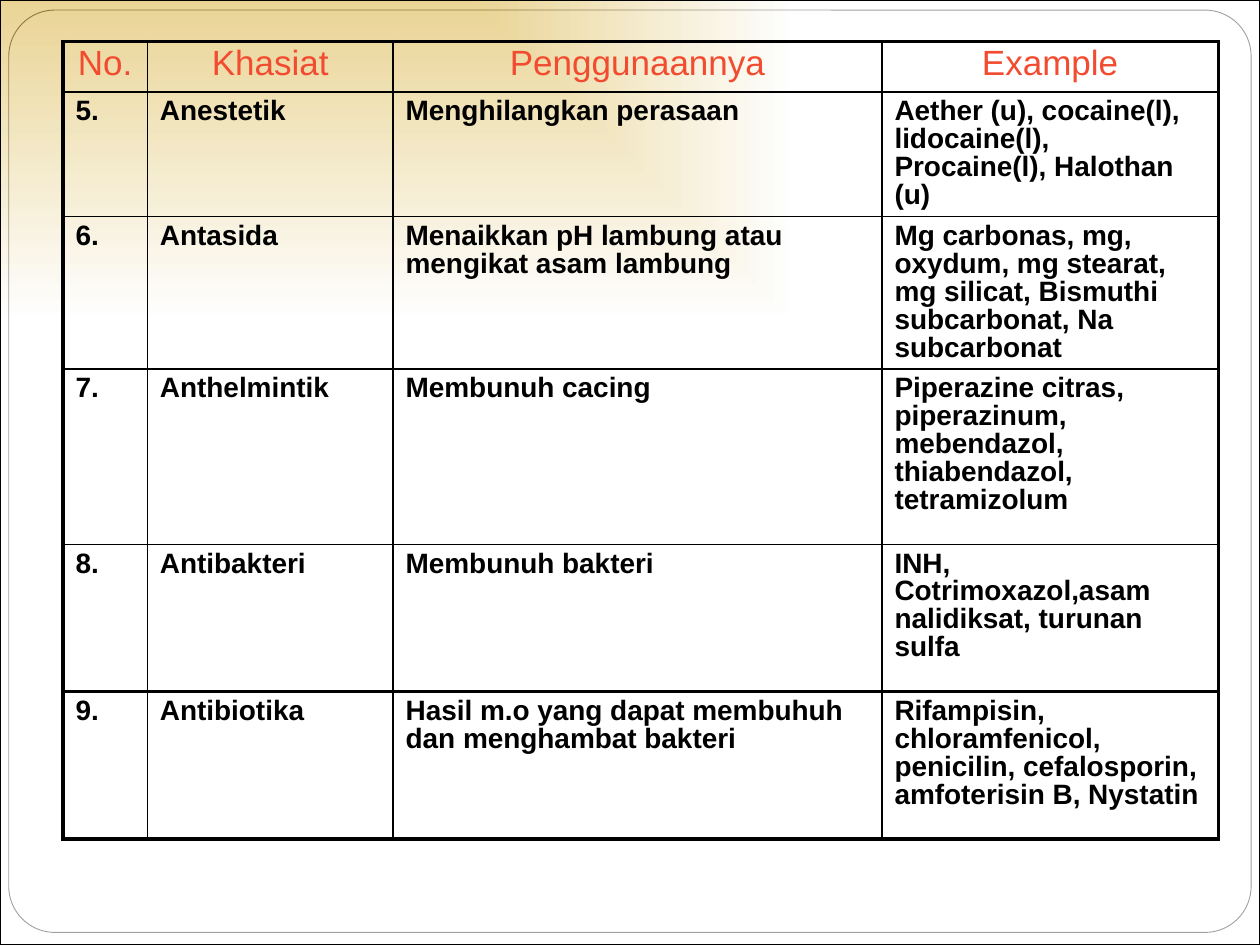
from dataclasses import dataclass

from pptx import Presentation, oxml, util as u
from pptx.dml.color import RGBColor
from pptx.enum import shapes, text

NS = 'xmlns:a="http://schemas.openxmlformats.org/drawingml/2006/main"'


@dataclass
class Theme:
    font: str = "Arial"
    head: str = "F24C30"
    ink: str = "000000"
    paper: str = "FFFFFF"
    glow: str = "CC9900"
    big: int = 20
    small: int = 16
    thin: float = 1
    thick: float = 2.25


T = Theme()


def add_box(kind, left, top, wide, high, line):
    box = slide.shapes.add_shape(
        kind, u.Inches(left), u.Inches(top), u.Inches(wide), u.Inches(high))
    box.shadow.inherit = False
    box.fill.solid()
    box.fill.fore_color.rgb = RGBColor.from_string(T.paper)
    box.line.color.rgb = RGBColor.from_string(T.ink)
    box.line.width = u.Pt(line)
    return box


def set_edges(cell, sides):
    props = cell._tc.get_or_add_tcPr()
    for i, (side, width) in enumerate(sides.items()):
        props.insert(i, oxml.parse_xml(
            f'<a:ln{side} {NS} w="{u.Pt(width)}"><a:solidFill>'
            f'<a:srgbClr val="{T.ink}"/></a:solidFill></a:ln{side}>'))


deck = Presentation()
deck.slide_width, deck.slide_height = u.Inches(10), u.Inches(7.5)
slide = deck.slides.add_slide(deck.slide_layouts[6])

# Rounded frame
frame = add_box(shapes.MSO_SHAPE.ROUNDED_RECTANGLE, 0.07, 0.08, 9.86, 7.32, 0.5)
frame.adjustments[0] = 0.05

# Glow fading out from the top left corner
glow = add_box(shapes.MSO_SHAPE.RECTANGLE, 0, 0, 10, 7.5, 0.75)
stops = "".join(
    f'<a:gs pos="{pos}"><a:srgbClr val="{color}"><a:alpha val="62000"/>'
    '</a:srgbClr></a:gs>' for pos, color in ((0, T.glow), (100000, T.paper)))
fill = glow._element.spPr.find(oxml.ns.qn("a:solidFill"))
fill.getparent().replace(fill, oxml.parse_xml(
    f'<a:gradFill {NS} rotWithShape="1"><a:gsLst>{stops}</a:gsLst>'
    '<a:path path="rect"><a:fillToRect r="100000" b="100000"/></a:path>'
    '</a:gradFill>'))

# Table of drug effects
rows = [
    ("No.", "Khasiat", "Penggunaannya", "Example"),
    ("5.", "Anestetik", "Menghilangkan perasaan",
     "Aether (u), cocaine(l), lidocaine(l), Procaine(l), Halothan (u)"),
    ("6.", "Antasida", "Menaikkan pH lambung atau mengikat asam lambung",
     "Mg carbonas, mg, oxydum, mg stearat, mg silicat, "
     "Bismuthi subcarbonat, Na subcarbonat"),
    ("7.", "Anthelmintik", "Membunuh cacing",
     "Piperazine citras, piperazinum, mebendazol, thiabendazol, tetramizolum"),
    ("8.", "Antibakteri", "Membunuh bakteri",
     "INH, Cotrimoxazol,asam nalidiksat, turunan sulfa"),
    ("9.", "Antibiotika", "Hasil m.o yang dapat membuhuh dan menghambat bakteri",
     "Rifampisin, chloramfenicol, penicilin, cefalosporin, "
     "amfoterisin B, Nystatin"),
]
wides = [0.67, 1.95, 3.88, 2.67]
highs = [0.4, 0.99, 1.21, 1.39, 1.17, 1.17]
table = slide.shapes.add_table(
    len(rows), len(wides), u.Inches(0.5), u.Inches(0.33),
    u.Inches(sum(wides)), u.Inches(sum(highs))).table
table.first_row = table.horz_banding = False
for col, wide in zip(table.columns, wides):
    col.width = u.Inches(wide)
for row, high in zip(table.rows, highs):
    row.height = u.Inches(high)

last_row, last_col = len(rows) - 1, len(wides) - 1
for r, row in enumerate(rows):
    for c, words in enumerate(row):
        cell = table.cell(r, c)
        cell.fill.background()
        cell.text_frame.text = words
        para = cell.text_frame.paragraphs[0]
        para.line_spacing = 0.9
        para.alignment = text.PP_ALIGN.LEFT if r else text.PP_ALIGN.CENTER
        font = para.runs[0].font
        font.name = T.font
        font.size = u.Pt(T.small if r else T.big)
        font.bold = r > 0
        font.color.rgb = RGBColor.from_string(T.ink if r else T.head)
        # Thick outer edges, and a thick rule above the last row
        set_edges(cell, {
            "L": T.thick if c == 0 else T.thin,
            "R": T.thick if c == last_col else T.thin,
            "T": T.thick if r in (0, last_row) else T.thin,
            "B": T.thick if r >= last_row - 1 else T.thin,
        })

deck.save("out.pptx")
